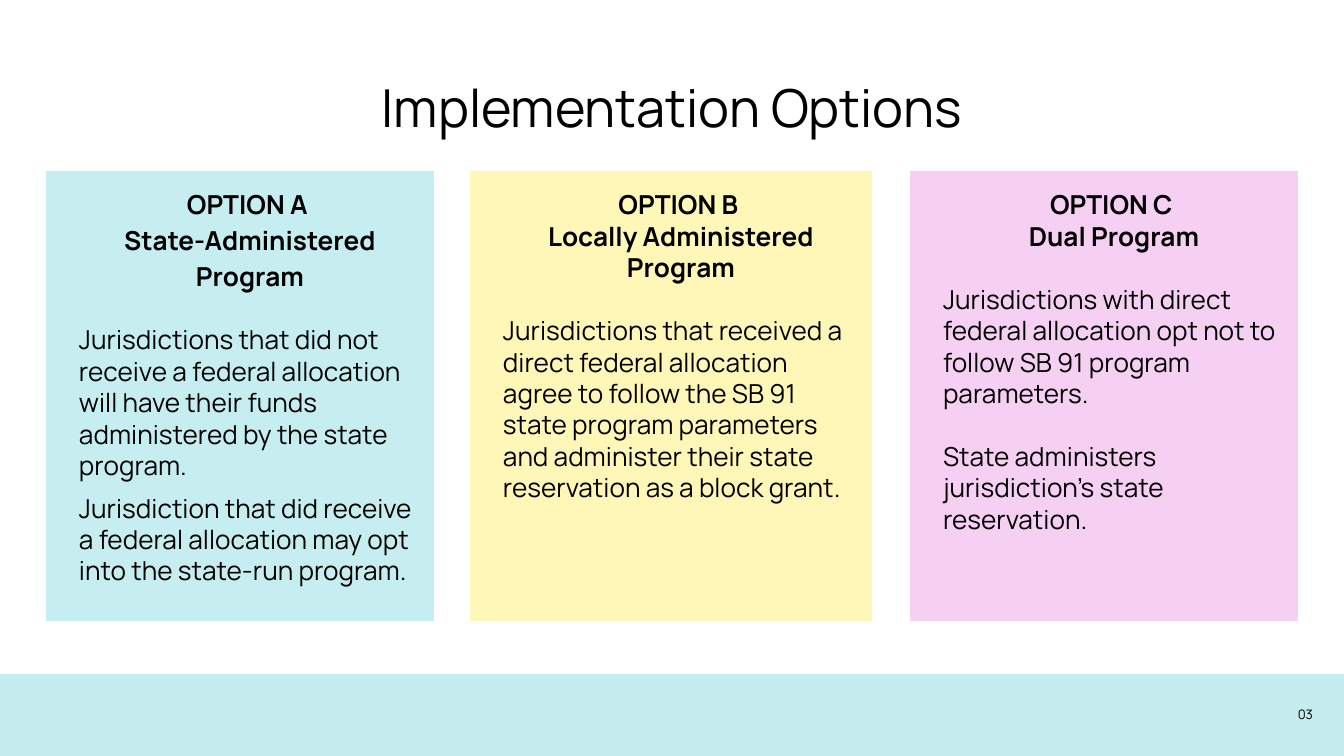
import pptx
import pptx.dml.color
import pptx.enum.shapes
import pptx.enum.text
import pptx.oxml
import pptx.oxml.ns
import pptx.util

PX = 914400 / 134.4
WIDTH, HEIGHT = 1344, 756
INSET = 13
INDENT = 20
BLANK_LINE = 17  # points
FONT = "Manrope"
COLORS = {
    "text": "000000",
    "page": "FFFFFF",
    "band": "C5ECEF",
    "blue": "C6EDEF",
    "yellow": "FFF391",
    "pink": "F0B7EE",
}
ALIGN = pptx.enum.text.PP_ALIGN
ANCHOR = pptx.enum.text.MSO_ANCHOR


def px(length):
    return pptx.util.Emu(round(length * PX))


def color(name):
    return pptx.dml.color.RGBColor.from_string(COLORS[name])


def place(shape, box):
    shape.left, shape.top, shape.width, shape.height = map(px, box)


def set_frame(shape, anchor):
    frame = shape.text_frame
    frame.word_wrap = True
    frame.auto_size = pptx.enum.text.MSO_AUTO_SIZE.NONE
    frame.vertical_anchor = anchor
    frame.margin_left = frame.margin_right = px(INSET)
    frame.margin_top = frame.margin_bottom = px(INSET)
    return frame


def write(para, text, size, align, bold=False):
    para.text = text
    para.alignment = align
    para.font.name = FONT
    para.font.size = pptx.util.Pt(size)
    para.font.bold = bold
    para.font.color.rgb = color("text")


def add_rectangle(page, box, fill, opacity=100):
    shape = page.shapes.add_shape(
        pptx.enum.shapes.MSO_SHAPE.RECTANGLE, *map(px, box))
    shape.shadow.inherit = False
    shape.fill.solid()
    shape.fill.fore_color.rgb = color(fill)
    shape.line.fill.background()
    if opacity < 100:
        tint = shape.fill._xPr.find(".//" + pptx.oxml.ns.qn("a:srgbClr"))
        alpha = pptx.oxml.parse_xml(
            f'<a:alpha {pptx.oxml.ns.nsdecls("a")} val="{opacity * 1000}"/>')
        tint.append(alpha)
    return shape


def add_title(page, box, text):
    title = page.shapes.title
    place(title, box)
    frame = set_frame(title, ANCHOR.TOP)
    write(frame.paragraphs[0], text, 28, ALIGN.CENTER)


def add_footer(page, box, number):
    left, top, width, height = box
    add_rectangle(page, box, "band")
    label = page.shapes.add_textbox(
        px(left + width - 98), px(top + 11), px(80), px(58))
    frame = set_frame(label, ANCHOR.MIDDLE)
    write(frame.paragraphs[0], number, 7, ALIGN.RIGHT)


def add_option(page, box, option):
    """Place a coloured panel with a bold heading above its body text."""
    panel = add_rectangle(page, box, option["fill"], option["opacity"])
    frame = set_frame(panel, ANCHOR.TOP)
    headings = [option["label"], option["name"]]
    for index, text in enumerate(headings + option["body"]):
        para = frame.paragraphs[0] if index == 0 else frame.add_paragraph()
        para._p.get_or_add_pPr().set("marL", str(px(INDENT)))
        is_heading = index < len(headings)
        write(para, text, 14, ALIGN.CENTER if is_heading else ALIGN.LEFT,
              is_heading)
        if index == 0:
            para.line_spacing = 1.15
        elif index == 1:
            para.line_spacing = option["name_spacing"]
        elif index == 2:
            para.space_before = pptx.util.Pt(BLANK_LINE)
        else:
            para.space_before = pptx.util.Pt(option["body_gap"])


OPTIONS = [
    {"left": 46, "width": 388, "fill": "blue", "opacity": 100,
     "label": "OPTION A ", "name": "State-Administered Program",
     "name_spacing": 1.15, "body_gap": 6,
     "body": ["Jurisdictions that did not receive a federal allocation will "
              "have their funds administered by the state program.",
              "Jurisdiction that did receive a federal allocation may opt "
              "into the state-run program."]},
    {"left": 470, "width": 402, "fill": "yellow", "opacity": 65,
     "label": "OPTION B ", "name": "Locally Administered Program",
     "name_spacing": 1.0, "body_gap": 0,
     "body": ["Jurisdictions that received a direct federal allocation agree "
              "to follow the SB 91 state program parameters and administer "
              "their state reservation as a block grant."]},
    {"left": 910, "width": 388, "fill": "pink", "opacity": 65,
     "label": "OPTION C ", "name": "Dual Program",
     "name_spacing": 1.0, "body_gap": BLANK_LINE,
     "body": ["Jurisdictions with direct federal allocation opt not to "
              "follow SB 91 program parameters.",
              "State administers jurisdiction’s state reservation."]},
]


def main():
    deck = pptx.Presentation()
    deck.slide_width, deck.slide_height = px(WIDTH), px(HEIGHT)
    page = deck.slides.add_slide(deck.slide_layouts.get_by_name("Title Only"))
    page.background.fill.solid()
    page.background.fill.fore_color.rgb = color("page")
    add_footer(page, (0, 674, WIDTH, HEIGHT - 674), "03")
    add_title(page, (46, 62, 1252, 85), "Implementation Options")
    for option in OPTIONS:
        add_option(page, (option["left"], 171, option["width"], 450), option)
    deck.save("out.pptx")


if __name__ == "__main__":
    main()
